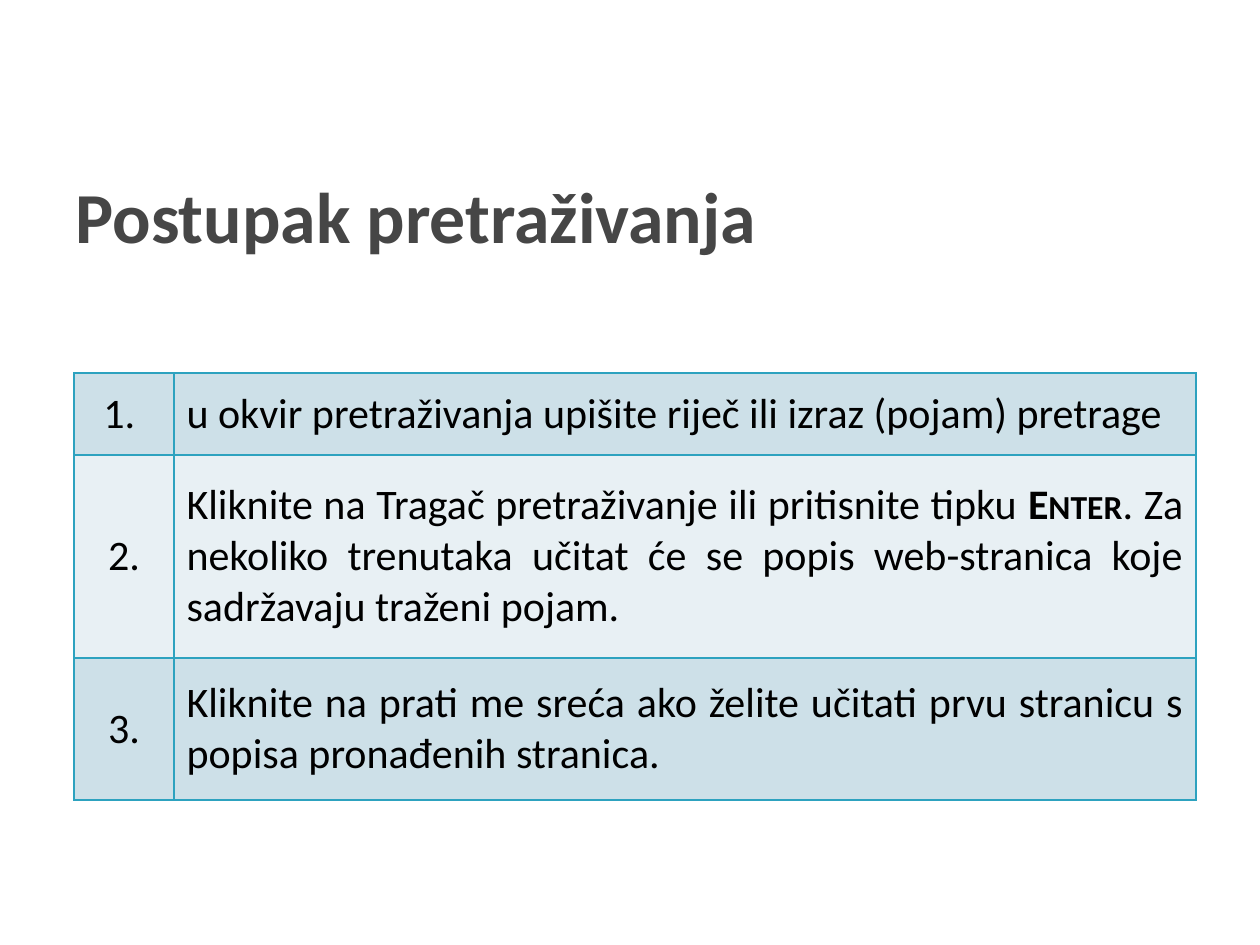
from lxml.etree import SubElement
from pptx import Presentation
from pptx.dml.color import RGBColor
from pptx.enum.text import MSO_ANCHOR, PP_ALIGN
from pptx.oxml.ns import qn
from pptx.util import Pt

PX = 914400 // 126
FONT = "Calibri"
COLORS = {"title": "464646", "text": "000000", "border": "2DA2BF",
          "odd": "CDE0E8", "even": "E8F0F4"}

TITLE = "Postupak pretraživanja"
STEPS = [
    ("1. ", ["u okvir pretraživanja upišite riječ ili izraz (pojam) pretrage"]),
    ("2.", ["Kliknite na Tragač pretraživanje ili pritisnite tipku ", "Enter",
            ". Za nekoliko trenutaka učitat će se popis web-stranica koje "
            "sadržavaju traženi pojam."]),
    ("3.", ["Kliknite na prati me sreća ako želite učitati prvu stranicu s "
            "popisa pronađenih stranica."]),
]
KEY_NAMES = {"Enter"}

TITLE_BOX = (63, 136, 1134, 158)
TABLE_LEFT, TABLE_TOP = 74, 373
COLUMN_WIDTHS = [100, 1022]
ROW_HEIGHTS = [82, 203, 142]


def px(*lengths):
    return [length * PX for length in lengths]


def style(paragraph, size, color, align):
    paragraph.alignment = align
    paragraph.font.name = FONT
    paragraph.font.size = Pt(size)
    paragraph.font.color.rgb = RGBColor.from_string(COLORS[color])


def add_borders(cell):
    properties = cell._tc.get_or_add_tcPr()
    for side in ("lnL", "lnR", "lnT", "lnB"):
        line = SubElement(properties, qn(f"a:{side}"), w=str(Pt(1)))
        fill = SubElement(line, qn("a:solidFill"))
        SubElement(fill, qn("a:srgbClr"), val=COLORS["border"])


def fill_cell(cell, parts, align, band):
    add_borders(cell)
    cell.fill.solid()
    cell.fill.fore_color.rgb = RGBColor.from_string(COLORS[band])
    cell.vertical_anchor = MSO_ANCHOR.MIDDLE
    paragraph = cell.text_frame.paragraphs[0]
    for part in parts:
        run = paragraph.add_run()
        run.text = part
        if part in KEY_NAMES:
            run.font.bold = True
            run._r.get_or_add_rPr().set("cap", "small")
    style(paragraph, 24, "text", align)


def main():
    deck = Presentation()
    deck.slide_width, deck.slide_height = px(1260, 945)
    slide = deck.slides.add_slide(deck.slide_layouts[5])

    title = slide.shapes.title
    title.left, title.top, title.width, title.height = px(*TITLE_BOX)
    title.text_frame.text = TITLE
    title.text_frame.vertical_anchor = MSO_ANCHOR.MIDDLE
    heading = title.text_frame.paragraphs[0]
    style(heading, 41, "title", PP_ALIGN.LEFT)
    heading.font.bold = True

    steps = slide.shapes.add_table(
        len(STEPS), len(COLUMN_WIDTHS),
        *px(TABLE_LEFT, TABLE_TOP, sum(COLUMN_WIDTHS), sum(ROW_HEIGHTS))).table
    steps.first_row = False
    steps.horz_banding = False
    for column, width in zip(steps.columns, px(*COLUMN_WIDTHS)):
        column.width = width
    for row, height in zip(steps.rows, px(*ROW_HEIGHTS)):
        row.height = height

    for index, (number, instruction) in enumerate(STEPS):
        band = "even" if index % 2 else "odd"
        fill_cell(steps.cell(index, 0), [number], PP_ALIGN.CENTER, band)
        fill_cell(steps.cell(index, 1), instruction, PP_ALIGN.JUSTIFY, band)

    deck.save("out.pptx")


if __name__ == "__main__":
    main()
